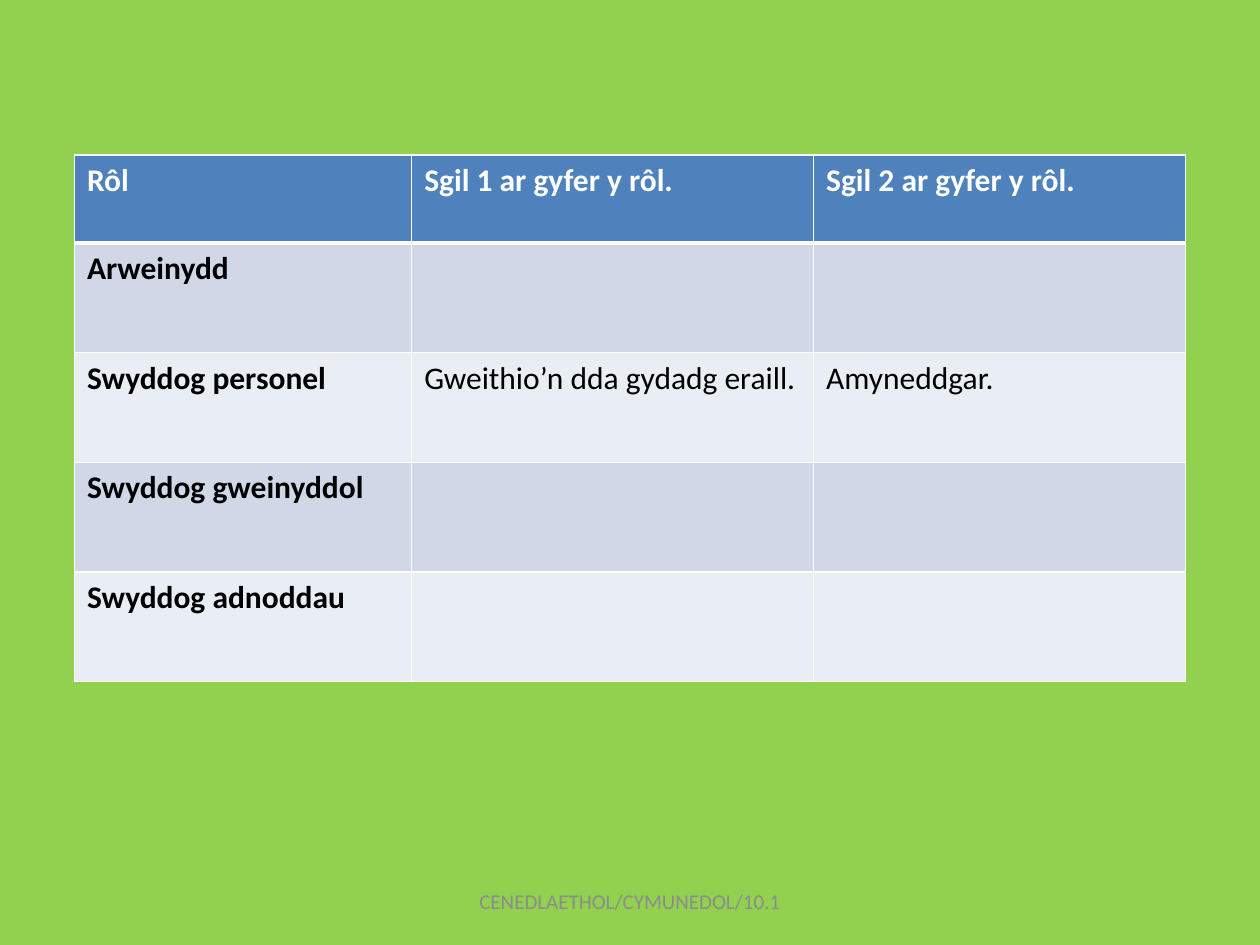
from lxml.etree import SubElement
from pptx import Presentation
from pptx.dml.color import RGBColor
from pptx.enum.text import MSO_ANCHOR, PP_ALIGN
from pptx.oxml.ns import qn
from pptx.util import Cm, Pt

# Content
ROWS = [
    ("Rôl", "Sgil 1 ar gyfer y rôl.", "Sgil 2 ar gyfer y rôl."),
    ("Arweinydd", "", ""),
    ("Swyddog personel", "Gweithio’n dda gydadg eraill.", "Amyneddgar."),
    ("Swyddog gweinyddol", "", ""),
    ("Swyddog adnoddau", "", ""),
]
FOOTER = "CENEDLAETHOL/CYMUNEDOL/10.1"

# Style
FONT = "Calibri"
GREEN = RGBColor(0x92, 0xD0, 0x50)
BLUE = RGBColor(0x4F, 0x81, 0xBD)
BANDS = [RGBColor(0xE9, 0xED, 0xF4), RGBColor(0xD0, 0xD8, 0xE8)]
WHITE = RGBColor(0xFF, 0xFF, 0xFF)
BLACK = RGBColor(0, 0, 0)
GREY = RGBColor(0x8C, 0x8C, 0x8C)

# Table grid in cm
LEFT, TOP = 1.5, 3.12
COL_WIDTHS = [6.8, 8.1, 7.5]
ROW_HEIGHTS = [1.78] + [2.21] * 4


def style_paragraph(p, size, color, bold=False):
    font = p.font
    font.name, font.size, font.bold = FONT, Pt(size), bold
    font.color.rgb = color


def add_borders(cell, widths):
    tc_pr = cell._tc.get_or_add_tcPr()
    for side, width in widths.items():
        ln = SubElement(tc_pr, qn(f"a:ln{side}"), w=str(Pt(width)))
        fill = SubElement(ln, qn("a:solidFill"))
        SubElement(fill, qn("a:srgbClr"), val=str(WHITE))


prs = Presentation()
prs.slide_width, prs.slide_height = Cm(25.4), Cm(19.05)
s = prs.slides.add_slide(prs.slide_layouts[6])
s.background.fill.solid()
s.background.fill.fore_color.rgb = GREEN

# Roles and skills table
table = s.shapes.add_table(
    len(ROWS), len(COL_WIDTHS), Cm(LEFT), Cm(TOP),
    Cm(sum(COL_WIDTHS)), Cm(sum(ROW_HEIGHTS))).table
for column, width in zip(table.columns, COL_WIDTHS):
    column.width = Cm(width)
for row, height in zip(table.rows, ROW_HEIGHTS):
    row.height = Cm(height)

for i, texts in enumerate(ROWS):
    header = i == 0
    for j, text in enumerate(texts):
        cell = table.cell(i, j)
        cell.text = text
        style_paragraph(cell.text_frame.paragraphs[0], 18,
                        WHITE if header else BLACK, bold=header or j == 0)
        # The line under the header is thicker
        add_borders(cell, {"L": 1, "R": 1, "T": 3 if i == 1 else 1,
                           "B": 3 if header else 1})
        cell.fill.solid()
        cell.fill.fore_color.rgb = BLUE if header else BANDS[i % 2]

# Footer
tf = s.shapes.add_textbox(Cm(8.68), Cm(17.66), Cm(8.04), Cm(1.01)).text_frame
tf.word_wrap = True
tf.vertical_anchor = MSO_ANCHOR.MIDDLE
p = tf.paragraphs[0]
p.text = FOOTER
p.alignment = PP_ALIGN.CENTER
style_paragraph(p, 12, GREY)

prs.save("out.pptx")
